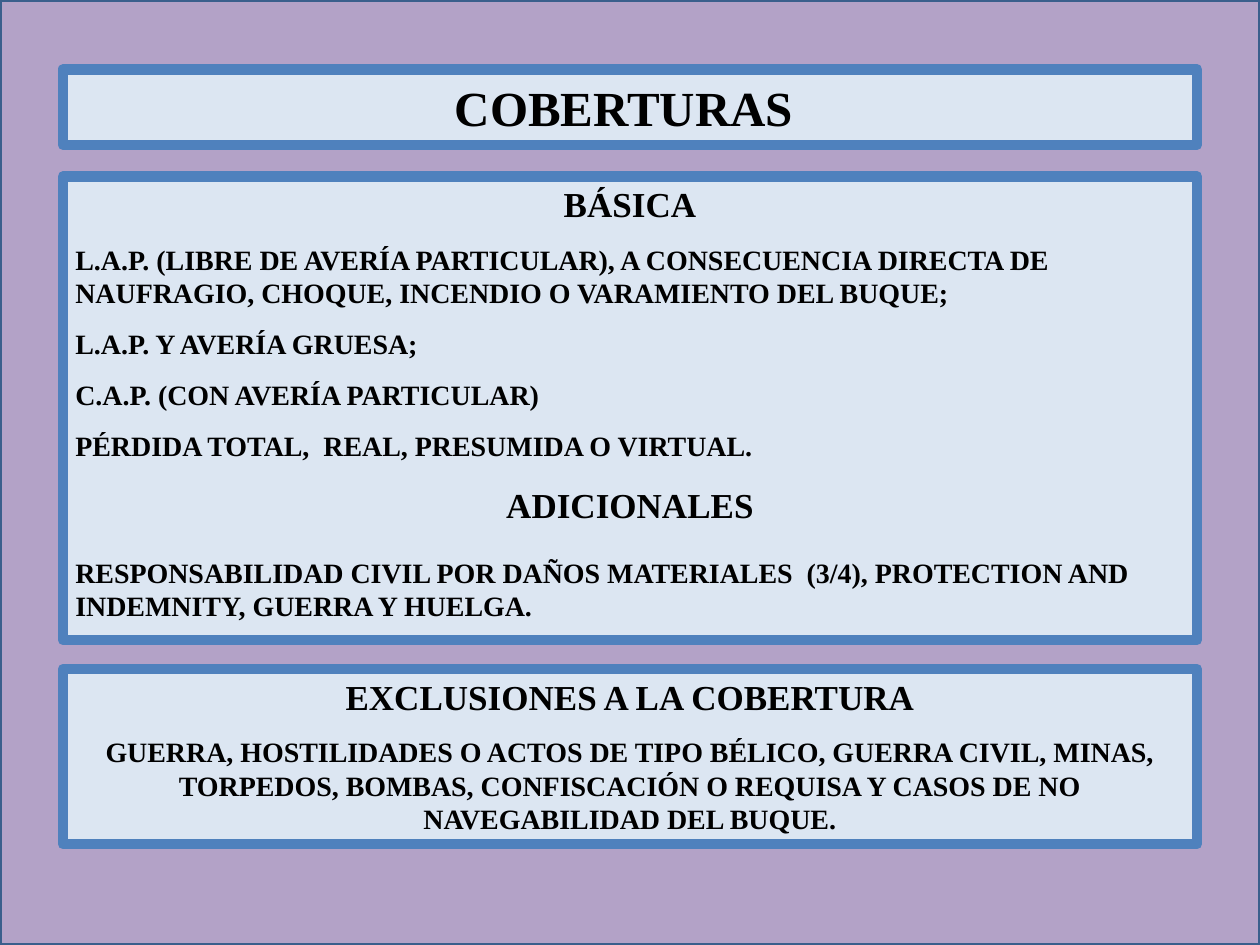
from dataclasses import dataclass

import pptx
import pptx.dml.color
import pptx.enum.shapes
import pptx.enum.text
import pptx.util
from pptx.shapes.autoshape import Shape
from pptx.slide import Slide

COLOURS = {
    "backdrop": "B3A2C7",
    "backdrop_edge": "3A5F8C",
    "panel": "DCE6F2",
    "panel_edge": "4F81BD",
    "ink": "000000",
}
FONT = "Times New Roman"
COLUMNS, ROWS = 200, 150
CELL = pptx.util.Inches(0.05)
MARGIN = 10

ALIGN = pptx.enum.text.PP_ALIGN
ANCHOR = pptx.enum.text.MSO_ANCHOR
AUTO_SIZE = pptx.enum.text.MSO_AUTO_SIZE


@dataclass(frozen=True)
class Line:
    text: str
    size: int = 16
    before: int = 10
    centred: bool = False


@dataclass(frozen=True)
class Panel:
    row: float
    rows: float
    lines: tuple[Line, ...]
    grows: bool = True


def heading(text: str, before: int = 0) -> Line:
    return Line(text, size=20, before=before, centred=True)


PANELS = (
    Panel(11, 12, (Line("COBERTURAS ", size=28, before=0, centred=True),), grows=False),
    Panel(28, 73.6, (
        heading("BÁSICA"),
        Line("L.A.P. (LIBRE DE AVERÍA PARTICULAR), A CONSECUENCIA DIRECTA DE "
             "NAUFRAGIO, CHOQUE, INCENDIO O VARAMIENTO DEL BUQUE;"),
        Line("L.A.P. Y AVERÍA GRUESA;"),
        Line("C.A.P. (CON AVERÍA PARTICULAR)"),
        Line("PÉRDIDA TOTAL,  REAL, PRESUMIDA O VIRTUAL."),
        heading("ADICIONALES", before=12),
        Line("RESPONSABILIDAD CIVIL POR DAÑOS MATERIALES  (3/4), PROTECTION AND "
             "INDEMNITY, GUERRA Y HUELGA.", before=17),
    )),
    Panel(106.2, 27.8, (
        heading("EXCLUSIONES A LA COBERTURA"),
        Line("GUERRA, HOSTILIDADES O ACTOS DE TIPO BÉLICO, GUERRA CIVIL, MINAS, "
             "TORPEDOS, BOMBAS, CONFISCACIÓN O REQUISA Y CASOS DE NO "
             "NAVEGABILIDAD DEL BUQUE.", centred=True),
    )),
)


def colour(name: str) -> pptx.dml.color.RGBColor:
    return pptx.dml.color.RGBColor.from_string(COLOURS[name])


def add_rectangle(slide: Slide, column: float, row: float, columns: float,
                  rows: float, fill: str, edge_width: float) -> Shape:
    """Place a rectangle by grid cells; its edge uses the fill's edge colour."""
    rectangle = slide.shapes.add_shape(
        pptx.enum.shapes.MSO_SHAPE.RECTANGLE,
        *(round(cells * CELL) for cells in (column, row, columns, rows)))
    rectangle.shadow.inherit = False
    rectangle.fill.solid()
    rectangle.fill.fore_color.rgb = colour(fill)
    rectangle.line.color.rgb = colour(f"{fill}_edge")
    rectangle.line.width = pptx.util.Pt(edge_width)
    return rectangle


def add_panel(slide: Slide, panel: Panel) -> None:
    frame = add_rectangle(slide, MARGIN, panel.row, COLUMNS - 2 * MARGIN,
                          panel.rows, "panel", 6).text_frame
    frame.word_wrap = True
    frame.vertical_anchor = ANCHOR.TOP if panel.grows else ANCHOR.MIDDLE
    frame.auto_size = AUTO_SIZE.SHAPE_TO_FIT_TEXT if panel.grows else AUTO_SIZE.NONE
    for index, line in enumerate(panel.lines):
        paragraph = frame.add_paragraph() if index else frame.paragraphs[0]
        paragraph.alignment = ALIGN.CENTER if line.centred else ALIGN.LEFT
        paragraph.space_before = pptx.util.Pt(line.before)
        run = paragraph.add_run()
        run.text = line.text
        run.font.name = FONT
        run.font.size = pptx.util.Pt(line.size)
        run.font.bold = True
        run.font.color.rgb = colour("ink")


def main() -> None:
    presentation = pptx.Presentation()
    presentation.slide_width = COLUMNS * CELL
    presentation.slide_height = ROWS * CELL
    slide = presentation.slides.add_slide(presentation.slide_layouts[6])
    add_rectangle(slide, 0, 0, COLUMNS, ROWS, "backdrop", 2)
    for panel in PANELS:
        add_panel(slide, panel)
    presentation.save("out.pptx")


if __name__ == "__main__":
    main()
